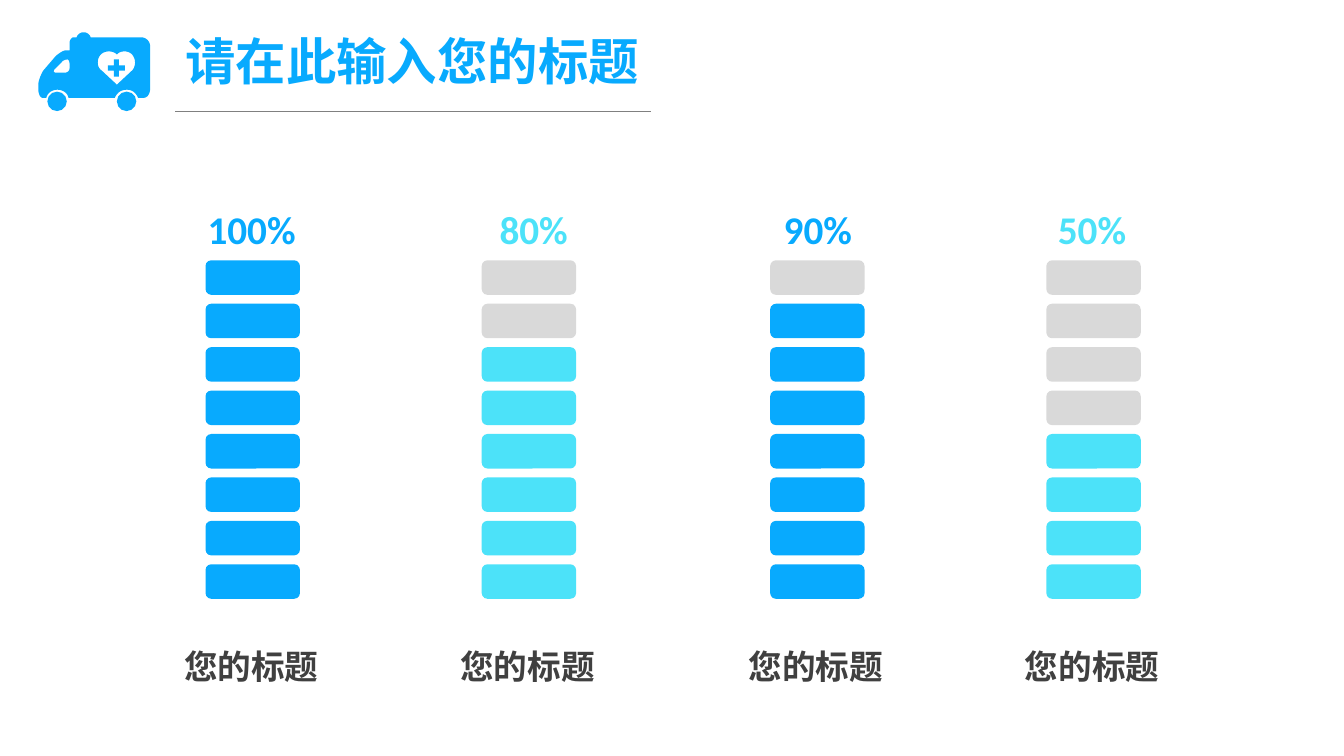
from pptx import Presentation
from pptx.util import Cm, Pt
from pptx.dml.color import RGBColor
from pptx.enum.shapes import MSO_SHAPE as Kind, MSO_CONNECTOR as Link
from pptx.enum.text import PP_ALIGN as Align, MSO_ANCHOR as Anchor, MSO_AUTO_SIZE as Fit
from pptx.oxml.ns import qn
from lxml.etree import SubElement

# Content
BLUE, CYAN, GREY, DARK, RULE = "08AAFE", "4CE2F9", "D9D9D9", "404040", "808080"
HAN, LATIN = "Noto Sans CJK SC", "Calibri"
TITLE = "请在此输入您的标题"
# percent, colour, caption, bar left, label middle, label width (cm)
BARS = [
    (100, BLUE, "您的标题", 5.18, 6.34, 2.26),
    (80, CYAN, "您的标题", 12.14, 13.45, 1.75),
    (90, BLUE, "您的标题", 19.41, 20.61, 1.75),
    (50, CYAN, "您的标题", 26.37, 27.52, 1.75),
]
COUNT, TOP, LOW, WIDE, HIGH = 8, 6.56, 14.22, 2.38, 0.87

# Van outlines in units of 0.0254 cm: pairs are lines, sixes are curves
UNIT = 0.0254
CROSS = [(118, 59), (113, 59), (113, 65), (107, 65), (107, 70), (113, 70),
         (113, 76), (118, 76), (118, 70), (124, 70), (124, 65), (118, 65)]
BODY = [(140, 37), (90, 37), (89, 34, 86, 32, 83, 32), (80, 32, 77, 34, 76, 37),
        (73, 37), (71, 37, 69, 40, 69, 43), (69, 50), (65, 50),
        (63, 50, 58, 53, 55, 56), (43, 70), (41, 73, 38, 80, 38, 84), (38, 88),
        (38, 93, 40, 97, 42, 97), (46, 97), (47, 92, 52, 89, 57, 89),
        (62, 89, 67, 92, 68, 97), (114, 97), (116, 92, 120, 89, 126, 89),
        (131, 89, 135, 92, 137, 97), (143, 97), (146, 97, 149, 93, 149, 88),
        (149, 46), (149, 41, 145, 37, 140, 37)]
PANE = [(69, 68), (69, 70, 67, 72, 65, 72), (55, 72), (53, 72, 53, 70, 54, 69),
        (61, 62), (62, 60, 65, 59, 67, 59), (68, 59, 69, 61, 69, 63)]
HEART = [(131, 70), (116, 84), (101, 70), (98, 68, 97, 65, 97, 62),
         (97, 56, 101, 51, 108, 51), (111, 51, 114, 52, 116, 54),
         (118, 52, 120, 51, 124, 51), (130, 51, 134, 56, 134, 62),
         (134, 65, 133, 68, 131, 70)]
WHEELS = [47, 116]

deck = Presentation()
deck.slide_width, deck.slide_height = Cm(33.87), Cm(19.05)
slide = deck.slides.add_slide(deck.slide_layouts[6])


def tint(code):
    return RGBColor.from_string(code)


def paint(shape, code):
    shape.shadow.inherit = False
    shape.fill.solid()
    shape.fill.fore_color.rgb = tint(code)
    shape.line.fill.background()


def block(home, kind, box, code):
    paint(home.shapes.add_shape(kind, *map(Cm, box)), code)


def write(home, box, words, size, font, code, label=False):
    frame = home.shapes.add_textbox(*map(Cm, box)).text_frame
    frame.word_wrap = False
    frame.auto_size = Fit.SHAPE_TO_FIT_TEXT
    para = frame.paragraphs[0]
    if label:
        frame.margin_left = frame.margin_right = 0
        frame.margin_top = frame.margin_bottom = 0
        frame.vertical_anchor = Anchor.BOTTOM
        para.alignment = Align.CENTER
    run = para.add_run()
    run.text = words
    run.font.size, run.font.bold, run.font.name = Pt(size), True, font
    run.font.color.rgb = tint(code)
    SubElement(run.font._element, qn("a:ea"), typeface=font)


def trace(path, steps=10):
    dots = [path[0]]
    for part in path[1:]:
        if len(part) == 2:
            dots.append(part)
            continue
        ends = [dots[-1], part[:2], part[2:4], part[4:]]
        for i in range(1, steps + 1):
            t = i / steps
            mix = ((1 - t) ** 3, 3 * t * (1 - t) ** 2, 3 * t * t * (1 - t), t ** 3)
            dots.append(tuple(sum(m * e[k] for m, e in zip(mix, ends)) for k in (0, 1)))
    return [(Cm(x * UNIT), Cm(y * UNIT)) for x, y in dots]


def draw(home, paths, code):
    first, *rest = map(trace, paths)
    pen = home.shapes.build_freeform(*first[0], scale=1.0)
    pen.add_line_segments(first[1:], close=True)
    for dots in rest:
        pen.move_to(*dots[0])
        pen.add_line_segments(dots[1:], close=True)
    paint(pen.convert_to_shape(), code)


# Heading and rule
write(slide, (4.42, 0.64, 12.09, 1.8), TITLE, 36, HAN, BLUE)
rule = slide.shapes.add_connector(Link.STRAIGHT, Cm(4.42), Cm(2.8), Cm(16.41), Cm(2.8))
rule.line.color.rgb = tint(RULE)
rule.line.width = Pt(0.5)
SubElement(rule._element.spPr, qn("a:effectLst"))

# Stacked bars, filled from the bottom
step = (LOW - TOP) / (COUNT - 1)
for rate, code, name, left, mid, span in BARS:
    stack = slide.shapes.add_group_shape()
    full = COUNT * rate // 100
    for i in range(COUNT):
        box = (left, LOW - i * step, WIDE, HIGH)
        block(stack, Kind.ROUNDED_RECTANGLE, box, code if i < full else GREY)
    write(stack, (mid - span / 2, 5.18, span, 1.19), f"{rate}%", 28, LATIN, code, True)
    write(slide, (left - 0.79, 16.15, 3.96, 1.28), name, 24, HAN, DARK)

# Van
van = slide.shapes.add_group_shape()
draw(van, [CROSS], BLUE)
for x in WHEELS:
    block(van, Kind.OVAL, (x * UNIT, 2.31, 0.49, 0.49), BLUE)
draw(van, [BODY, PANE, HEART], BLUE)

deck.save("out.pptx")
